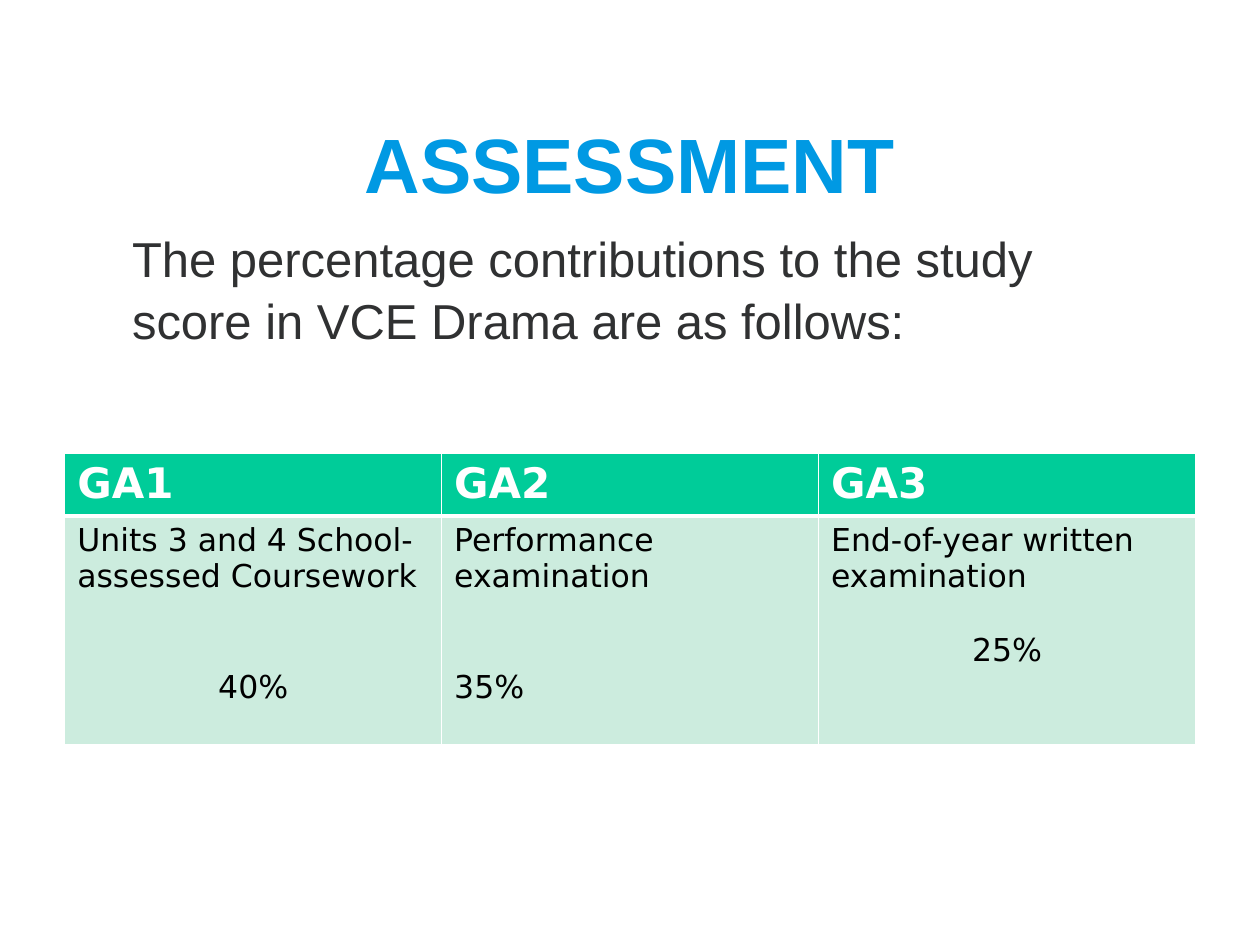
from pptx import Presentation
from pptx.dml.color import RGBColor
from pptx.enum import text
from pptx.oxml import parse_xml
from pptx.oxml.ns import nsdecls
from pptx.util import Pt

TITLE = "ASSESSMENT"
INTRO = "The percentage contributions to the study score in VCE Drama are as follows:"
LEFT, CENTER = text.PP_ALIGN.LEFT, text.PP_ALIGN.CENTER
# heading, description, share, share alignment, gap above the share
ASSESSMENTS = [
    ("GA1", "Units 3 and 4 School-assessed Coursework", "40%", CENTER, 42),
    ("GA2", "Performance examination", "35%", LEFT, 42),
    ("GA3", "End-of-year written examination", "25%", CENTER, 21),
]

BLUE = RGBColor(0x00, 0x99, 0xE3)
DARK = RGBColor(0x30, 0x31, 0x32)
GREEN = RGBColor(0x00, 0xCC, 0x99)
PALE_GREEN = RGBColor(0xCC, 0xEC, 0xDE)
WHITE = RGBColor(0xFF, 0xFF, 0xFF)
BLACK = RGBColor(0x00, 0x00, 0x00)

TABLE_LEFT, TABLE_TOP = 37, 258.8
COLUMN_WIDTH = 215.4
ROW_HEIGHTS = (35, 130.8)


def style(paragraph, name, size, color, bold=False):
    for run in paragraph.runs:
        font = run.font
        font.name, font.size, font.bold = name, Pt(size), bold
        font.color.rgb = color


def add_text(slide, box, content, size, color, bold=False):
    frame = slide.shapes.add_textbox(*map(Pt, box)).text_frame
    frame.word_wrap = True
    frame.text = content
    style(frame.paragraphs[0], "Arial", size, color, bold)
    return frame


def set_borders(cell, **widths):
    """Draw white cell borders; widths are points keyed by side (L, R, T, B)."""
    properties = cell._tc.get_or_add_tcPr()
    for position, (side, width) in enumerate(widths.items()):
        properties.insert(position, parse_xml(
            f'<a:ln{side} {nsdecls("a")} w="{Pt(width)}"><a:solidFill>'
            f'<a:srgbClr val="{WHITE}"/></a:solidFill></a:ln{side}>'))


def fill_cell(cell, color):
    cell.fill.solid()
    cell.fill.fore_color.rgb = color


presentation = Presentation()
presentation.slide_width, presentation.slide_height = Pt(720), Pt(540)
slide = presentation.slides.add_slide(presentation.slide_layouts[6])

intro = add_text(slide, (68.4, 125.3, 583.2, 357), INTRO, 28, DARK)
intro.paragraphs[0].line_spacing = 1.05

title = add_text(slide, (54, 48.2, 612, 90), TITLE, 44, BLUE, bold=True)
title.vertical_anchor = text.MSO_ANCHOR.MIDDLE
title.paragraphs[0].alignment = CENTER

table = slide.shapes.add_table(
    len(ROW_HEIGHTS), len(ASSESSMENTS), Pt(TABLE_LEFT), Pt(TABLE_TOP),
    Pt(COLUMN_WIDTH * len(ASSESSMENTS)), Pt(sum(ROW_HEIGHTS))).table
for row, height in zip(table.rows, ROW_HEIGHTS):
    row.height = Pt(height)

for index, (heading, description, share, alignment, gap) in enumerate(ASSESSMENTS):
    table.columns[index].width = Pt(COLUMN_WIDTH)

    header = table.cell(0, index)
    header.text_frame.text = heading
    style(header.text_frame.paragraphs[0], "DejaVu Sans", 24, WHITE, bold=True)
    fill_cell(header, GREEN)
    set_borders(header, L=1, R=1, T=1, B=3)

    body = table.cell(1, index)
    body.text_frame.text = description
    share_paragraph = body.text_frame.add_paragraph()
    share_paragraph.text = share
    share_paragraph.alignment = alignment
    share_paragraph.space_before = Pt(gap)
    for paragraph in body.text_frame.paragraphs:
        style(paragraph, "DejaVu Sans", 18, BLACK)
    fill_cell(body, PALE_GREEN)
    set_borders(body, L=1, R=1, T=3, B=1)

presentation.save("out.pptx")
